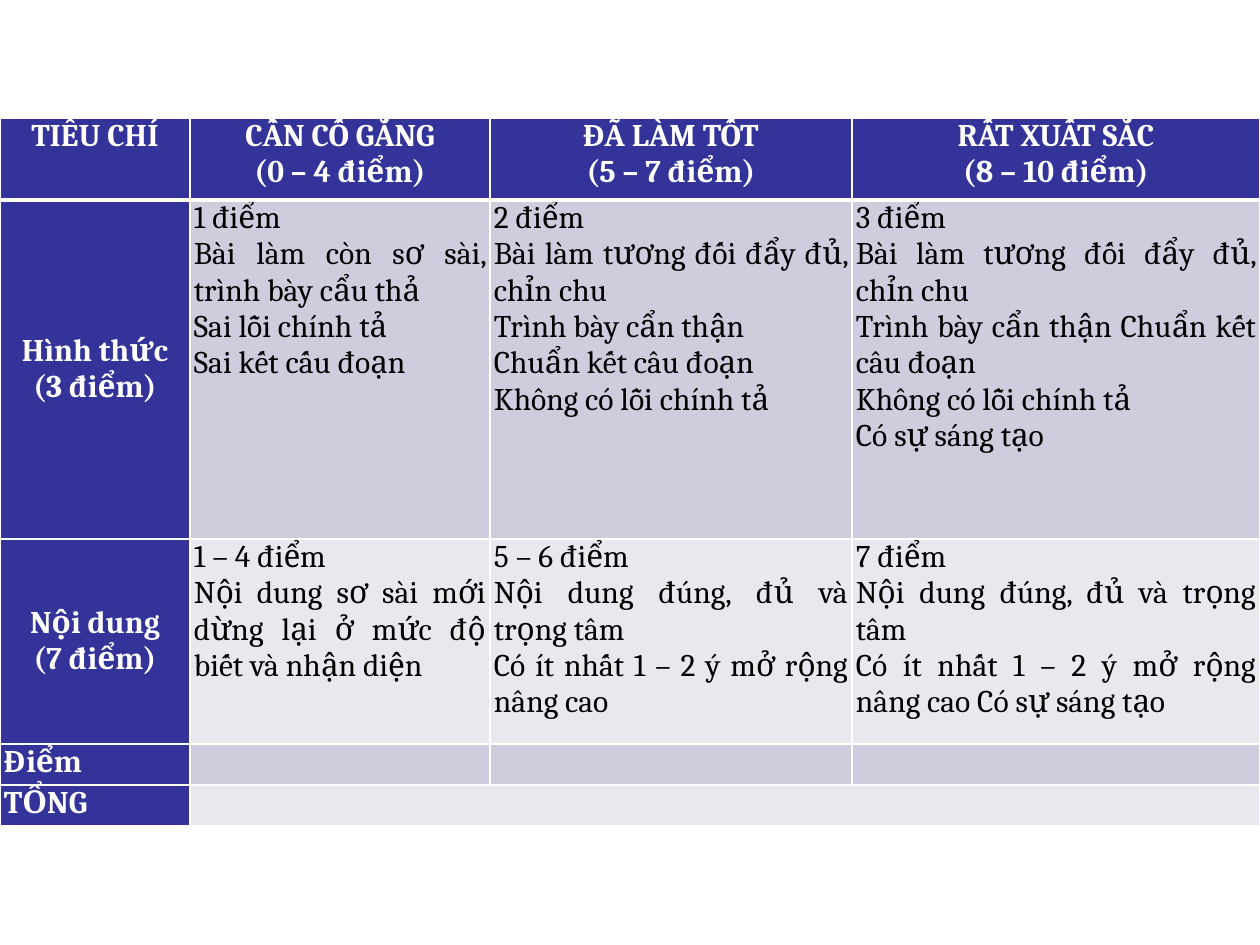
from lxml import etree
from pptx import Presentation
from pptx import util as u
from pptx.dml.color import RGBColor
from pptx.enum import text
from pptx.oxml import ns

PX = 914400 / 126
WHITE = RGBColor(0xFF, 0xFF, 0xFF)
BLACK = RGBColor(0, 0, 0)
NAVY = RGBColor(0x33, 0x33, 0x99)
BANDS = [RGBColor(0xE8, 0xE8, 0xEF), RGBColor(0xCD, 0xCD, 0xDE)]
MID, TOP = text.MSO_ANCHOR.MIDDLE, text.MSO_ANCHOR.TOP
CENTER, JUSTIFY = text.PP_ALIGN.CENTER, text.PP_ALIGN.JUSTIFY

COLS = [190, 300, 362, 408]
ROWS = [82, 339, 205, 41, 41]
RUBRIC = [
    ["TIÊU CHÍ", "CẦN CỐ GẮNG\n(0 – 4 điểm)", "ĐÃ LÀM TỐT\n(5 – 7 điểm)",
     "RẤT XUẤT SẮC\n(8 – 10 điểm)"],
    ["Hình thức\n(3 điểm)",
     "1 điểm\nBài làm còn sơ sài, trình bày cẩu thả\nSai lỗi chính tả\n"
     "Sai kết cấu đoạn",
     "2 điểm\nBài làm tương đối đẩy đủ, chỉn chu\nTrình bày cẩn thận\n"
     "Chuẩn kết câu đoạn\nKhông có lỗi chính tả",
     "3 điểm\nBài làm tương đối đẩy đủ, chỉn chu\n"
     "Trình bày cẩn thận Chuẩn kết câu đoạn\nKhông có lỗi chính tả\n"
     "Có sự sáng tạo"],
    ["Nội dung\n(7 điểm)",
     "1 – 4 điểm\nNội dung sơ sài mới dừng lại ở mức độ biết và nhận diện",
     "5 – 6 điểm\nNội dung đúng, đủ và trọng tâm\n"
     "Có ít nhất 1 – 2 ý mở rộng nâng cao",
     "7 điểm\nNội dung đúng, đủ và trọng tâm\n"
     "Có ít nhất 1 – 2 ý mở rộng nâng cao Có sự sáng tạo"],
    ["Điểm", "", "", ""],
    ["TỔNG", "", "", ""],
]


def px(n):
    return u.Emu(round(n * PX))


def write(frame, words, color=BLACK, bold=False, align=JUSTIFY):
    frame.text = words
    for para in frame.paragraphs:
        para.alignment = align
        para.font.size = u.Pt(18)
        for run in para.runs:
            run.font.name = "Cambria"
            run.font.size = u.Pt(18)
            run.font.bold = bold
            run.font.color.rgb = color


deck = Presentation()
deck.slide_width, deck.slide_height = u.Inches(10), u.Inches(7.5)
slide = deck.slides.add_slide(deck.slide_layouts[6])
table = slide.shapes.add_table(len(ROWS), len(COLS), 0, px(118),
                               px(sum(COLS)), px(sum(ROWS))).table
for col, width in zip(table.columns, COLS):
    col.width = px(width)
for row, height in zip(table.rows, ROWS):
    row.height = px(height)

for r, line in enumerate(RUBRIC):
    for c, words in enumerate(line):
        cell = table.cell(r, c)
        head = r == 0 or c == 0
        cell.margin_left = cell.margin_right = px(4)
        cell.margin_top = cell.margin_bottom = 0
        cell.vertical_anchor = MID if c == 0 and r in (1, 2) else TOP

        # Borders must come before the fill in the cell's XML
        props = cell._tc.get_or_add_tcPr()
        for side in "LRTB":
            thick = (r, side) in ((0, "B"), (1, "T"))
            edge = etree.SubElement(props, ns.qn("a:ln" + side),
                                    w=str(u.Pt(3 if thick else 1)))
            fill = etree.SubElement(edge, ns.qn("a:solidFill"))
            etree.SubElement(fill, ns.qn("a:srgbClr"), val=str(WHITE))

        cell.fill.solid()
        cell.fill.fore_color.rgb = NAVY if head else BANDS[r % 2]
        write(cell.text_frame, words, color=WHITE if head else BLACK, bold=head,
              align=CENTER if head and r < 3 else JUSTIFY)

table.cell(4, 1).merge(table.cell(4, 3))
deck.save("out.pptx")
